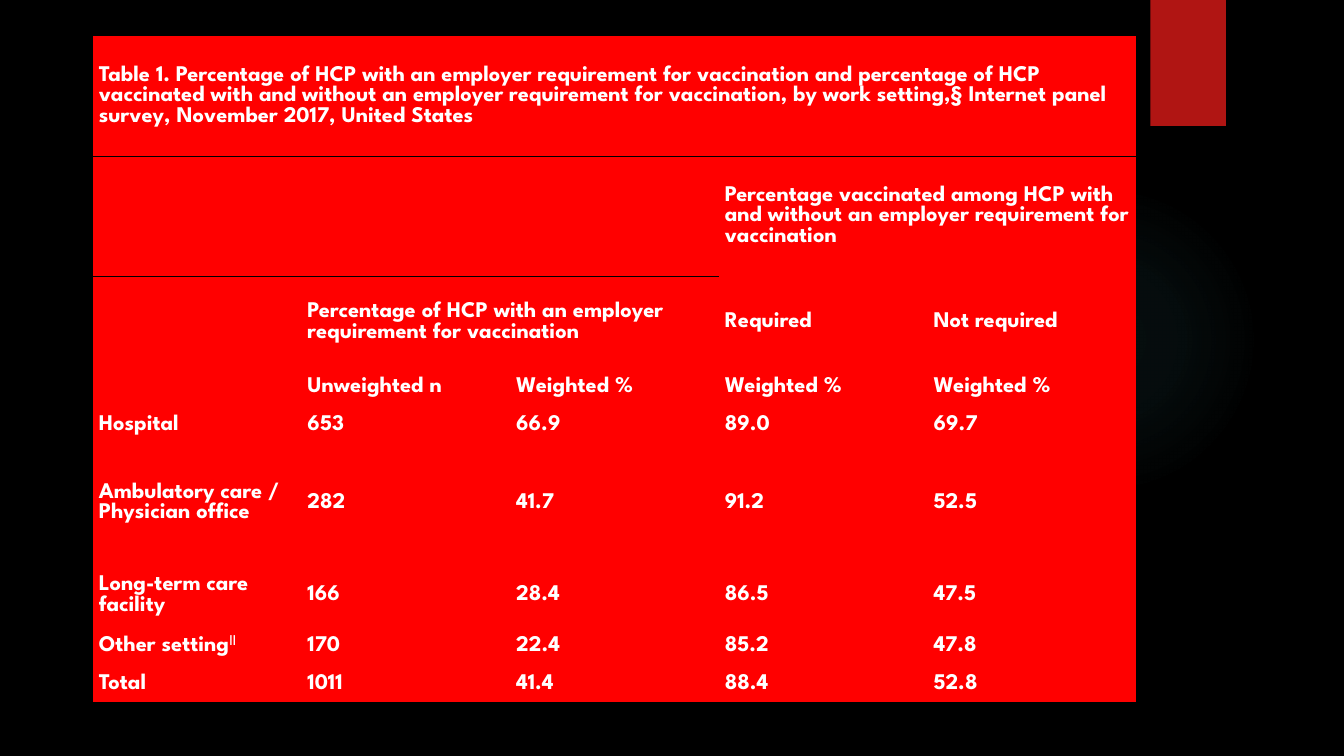
import pptx
import pptx.util
import pptx.dml.color
import pptx.enum.shapes
import pptx.enum.text
import pptx.oxml
import pptx.oxml.ns

COLORS = {"background": "000000", "table": "FF0000", "text": "FFFFFF",
          "ribbon": "B01513", "glow": "50B9C1", "rule": "000000"}
FONT = "League Spartan"
SLIDE_SIZE = (13.33, 7.5)
TABLE_LEFT, TABLE_TOP = 0.92, 0.36
COLUMN_WIDTH, COLUMN_COUNT = 2.07, 5
ROW_HEIGHTS = [1.19, 1.19, 0.92, 0.37, 0.37, 1.19, 0.64, 0.37, 0.37]
GLOW_BOX = (9.41, 1.83, 3.08, 3.08)
RIBBON_BOX = (11.41, 0, 0.75, 1.25)
GLOW_STOPS = [(0, 7), (36, 6), (69, 0)]

TABLE_ROWS = [
    ["Table 1. Percentage of HCP with an employer requirement for vaccination and "
     "percentage of HCP vaccinated with and without an employer requirement for "
     "vaccination, by work setting,§ Internet panel survey, November 2017, United States",
     "", "", "", ""],
    ["", "", "", "Percentage vaccinated among HCP with and without an employer "
     "requirement for vaccination", ""],
    ["", "Percentage of HCP with an employer requirement for vaccination", "",
     "Required", "Not required"],
    ["", "Unweighted n", "Weighted %", "Weighted %", "Weighted %"],
    ["Hospital", "653", "66.9", "89.0", "69.7"],
    ["Ambulatory care / Physician office", "282", "41.7", "91.2", "52.5"],
    ["Long-term care facility", "166", "28.4", "86.5", "47.5"],
    [("Other setting", "ǁ"), "170", "22.4", "85.2", "47.8"],
    ["Total", "1011", "41.4", "88.4", "52.8"],
]
MERGES = [(0, 0, 4), (1, 0, 2), (1, 3, 4), (2, 1, 2)]
RULED_CELLS = [(1, column) for column in range(3)]
NO_STYLE = "{2D5ABB26-0587-4C30-8999-92F81FD0307C}"
XMLNS = 'xmlns:a="http://schemas.openxmlformats.org/drawingml/2006/main"'

inches = pptx.util.Inches


def rgb(name):
    return pptx.dml.color.RGBColor.from_string(COLORS[name])


def paint(target, name):
    target.fill.solid()
    target.fill.fore_color.rgb = rgb(name)


def add_decoration(slide, kind, box, color):
    decoration = slide.shapes.add_shape(kind, *map(inches, box))
    decoration.shadow.inherit = False
    decoration.line.fill.background()
    paint(decoration, color)
    return decoration


def make_glow(ellipse):
    stops = "".join(
        f'<a:gs pos="{position * 1000}"><a:srgbClr val="{COLORS["glow"]}">'
        f'<a:alpha val="{alpha * 1000}"/></a:srgbClr></a:gs>'
        for position, alpha in GLOW_STOPS)
    gradient = pptx.oxml.parse_xml(
        f'<a:gradFill {XMLNS} rotWithShape="1"><a:gsLst>{stops}</a:gsLst>'
        '<a:path path="circle"><a:fillToRect l="50000" t="50000" r="50000" b="50000"/>'
        '</a:path></a:gradFill>')
    properties = ellipse.element.spPr
    properties.replace(properties.find(pptx.oxml.ns.qn("a:solidFill")), gradient)


def fill_cell(cell, content):
    paint(cell, "table")
    cell.vertical_anchor = pptx.enum.text.MSO_ANCHOR.MIDDLE
    cell.margin_left = cell.margin_right = inches(0.06)
    cell.margin_top = cell.margin_bottom = inches(0.03)
    parts = content if isinstance(content, tuple) else (content,)
    for index, part in enumerate(parts):
        if not part:
            continue
        run = cell.text_frame.paragraphs[0].add_run()
        run.text = part
        run.font.name = FONT
        run.font.size = pptx.util.Pt(16)
        run.font.bold = True
        run.font.color.rgb = rgb("text")
        if index:
            run.font.fill.solid()
            run.font.color.rgb = rgb("text")
            run.font._element.set("baseline", "30000")


def rule_above(cell):
    cell._tc.get_or_add_tcPr().insert(0, pptx.oxml.parse_xml(
        f'<a:lnT {XMLNS} w="12700"><a:solidFill><a:srgbClr val="{COLORS["rule"]}"/>'
        '</a:solidFill></a:lnT>'))


def add_survey_table(slide):
    frame = slide.shapes.add_table(
        len(ROW_HEIGHTS), COLUMN_COUNT, inches(TABLE_LEFT), inches(TABLE_TOP),
        inches(COLUMN_WIDTH * COLUMN_COUNT), inches(sum(ROW_HEIGHTS)))
    survey = frame.table
    survey.first_row = survey.horz_banding = False
    for style in frame.element.iter(pptx.oxml.ns.qn("a:tableStyleId")):
        style.text = NO_STYLE
    for column in survey.columns:
        column.width = inches(COLUMN_WIDTH)
    for row, height in zip(survey.rows, ROW_HEIGHTS):
        row.height = inches(height)
    for row_index, contents in enumerate(TABLE_ROWS):
        for column_index, content in enumerate(contents):
            fill_cell(survey.cell(row_index, column_index), content)
    for position in RULED_CELLS:
        rule_above(survey.cell(*position))
    for row_index, first, last in MERGES:
        survey.cell(row_index, first).merge(survey.cell(row_index, last))


def main():
    deck = pptx.Presentation()
    deck.slide_width, deck.slide_height = map(inches, SLIDE_SIZE)
    slide = deck.slides.add_slide(deck.slide_layouts[6])
    paint(slide.background, "background")
    shapes = pptx.enum.shapes.MSO_SHAPE
    make_glow(add_decoration(slide, shapes.OVAL, GLOW_BOX, "glow"))
    add_decoration(slide, shapes.RECTANGLE, RIBBON_BOX, "ribbon")
    add_survey_table(slide)
    deck.save("out.pptx")


if __name__ == "__main__":
    main()
